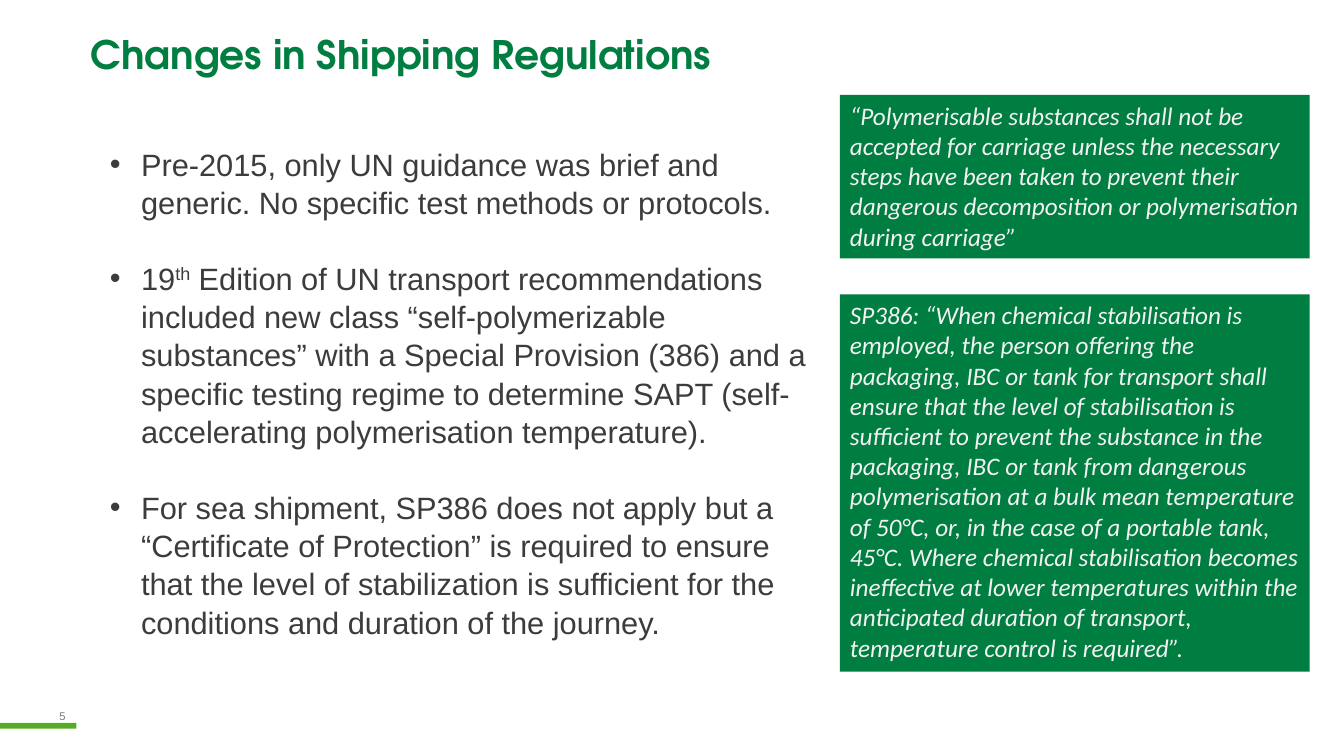
from pptx import Presentation
from pptx.dml.color import RGBColor
from pptx.enum.shapes import MSO_SHAPE as Shape
from pptx.enum.text import MSO_ANCHOR as Anchor, PP_ALIGN as Align
from pptx.oxml.ns import qn
from pptx.util import Inches, Pt
from lxml.etree import SubElement

COLORS = {"green": "007D40", "lime": "57AB27", "body": "3C3C3C", "quote": "F2F2F2", "number": "797979"}
COLUMNS, ROWS = 32, 18

BULLETS = [
    [("Pre-2015, only UN guidance was brief and generic. No specific test methods or protocols.", False)],
    [
        ("19", False),
        ("th", True),
        (" Edition of UN transport recommendations included new class “self-polymerizable substances” "
         "with a Special Provision (386) and a specific testing regime to determine SAPT "
         "(self-accelerating polymerisation temperature).", False),
    ],
    [("For sea shipment, SP386 does not apply but a “Certificate of Protection” is required to ensure "
      "that the level of stabilization is sufficient for the conditions and duration of the journey.", False)],
]
QUOTES = [
    (2.26, 3.89,
     "“Polymerisable substances shall not be accepted for carriage unless the necessary steps have been "
     "taken to prevent their dangerous decomposition or polymerisation during carriage”"),
    (7.01, 8.98,
     "SP386: “When chemical stabilisation is employed, the person offering the packaging, IBC or tank for "
     "transport shall ensure that the level of stabilisation is sufficient to prevent the substance in the "
     "packaging, IBC or tank from dangerous polymerisation at a bulk mean temperature of 50°C, or, in the "
     "case of a portable tank, 45°C. Where chemical stabilisation becomes ineffective at lower temperatures "
     "within the anticipated duration of transport, temperature control is required”."),
]


class SlideBuilder:
    """Places styled elements on a grid of 32 columns and 18 rows."""

    def __init__(self, presentation):
        self.column = presentation.slide_width / COLUMNS
        self.row = presentation.slide_height / ROWS
        self.slide = presentation.slides.add_slide(presentation.slide_layouts[5])

    def area(self, left, top, width, height):
        return (round(left * self.column), round(top * self.row),
                round(width * self.column), round(height * self.row))

    def style(self, font, name, size, color, bold=False, italic=False):
        font.name, font.size, font.bold, font.italic = name, Pt(size), bold, italic
        font.color.rgb = RGBColor.from_string(COLORS[color])

    def title(self, text, *area):
        title = self.slide.shapes.title
        title.left, title.top, title.width, title.height = self.area(*area)
        title.text_frame.text = text
        title.text_frame.vertical_anchor = Anchor.MIDDLE
        paragraph = title.text_frame.paragraphs[0]
        paragraph.alignment = Align.LEFT
        paragraph.line_spacing = 0.9
        self.style(paragraph.runs[0].font, "TeX Gyre Adventor", 28, "green", bold=True)

    def rectangle(self, color, *area):
        shape = self.slide.shapes.add_shape(Shape.RECTANGLE, *self.area(*area))
        shape.shadow.inherit = False
        shape.fill.solid()
        shape.fill.fore_color.rgb = RGBColor.from_string(COLORS[color])
        shape.line.fill.background()
        return shape

    def quote(self, text, *area):
        frame = self.rectangle("green", *area).text_frame
        frame.word_wrap = True
        frame.vertical_anchor = Anchor.TOP
        frame.text = text
        paragraph = frame.paragraphs[0]
        paragraph.alignment = Align.LEFT
        self.style(paragraph.runs[0].font, "Calibri", 18, "quote", italic=True)

    def bullets(self, items, *area):
        frame = self.slide.shapes.add_textbox(*self.area(*area)).text_frame
        frame.word_wrap = True
        for index, item in enumerate(items):
            paragraph = frame.add_paragraph() if index else frame.paragraphs[0]
            paragraph.line_spacing = 1.04
            paragraph.space_before = Pt(26.4 if index else 0)
            properties = paragraph._p.get_or_add_pPr()
            properties.set("marL", str(Inches(0.31)))
            properties.set("indent", str(-Inches(0.31)))
            SubElement(properties, qn("a:buFont"), typeface="Arial")
            SubElement(properties, qn("a:buChar"), char="•")
            for text, raised in item:
                run = paragraph.add_run()
                run.text = text
                self.style(run.font, "Arial", 22, "body")
                if raised:
                    run.font._element.set("baseline", "30000")

    def number(self, text, *area):
        frame = self.slide.shapes.add_textbox(*self.area(*area)).text_frame
        frame.word_wrap = False
        frame.text = text
        paragraph = frame.paragraphs[0]
        paragraph.alignment = Align.CENTER
        self.style(paragraph.runs[0].font, "Arial", 8, "number")


def main():
    presentation = Presentation()
    presentation.slide_width, presentation.slide_height = Inches(13.33), Inches(7.5)
    builder = SlideBuilder(presentation)
    builder.number("5", 0.98, 16.78, 1.01, 0.58)
    builder.rectangle("lime", 0, 17.21, 1.82, 0.14)
    builder.title("Changes in Shipping Regulations", 1.92, 0.84, 29.98, 1.01)
    builder.bullets(BULLETS, 2.38, 3.31, 17.45, 11.78)
    for top, height, text in QUOTES:
        builder.quote(text, 20, top, 11.18, height)
    presentation.save("out.pptx")


if __name__ == "__main__":
    main()
